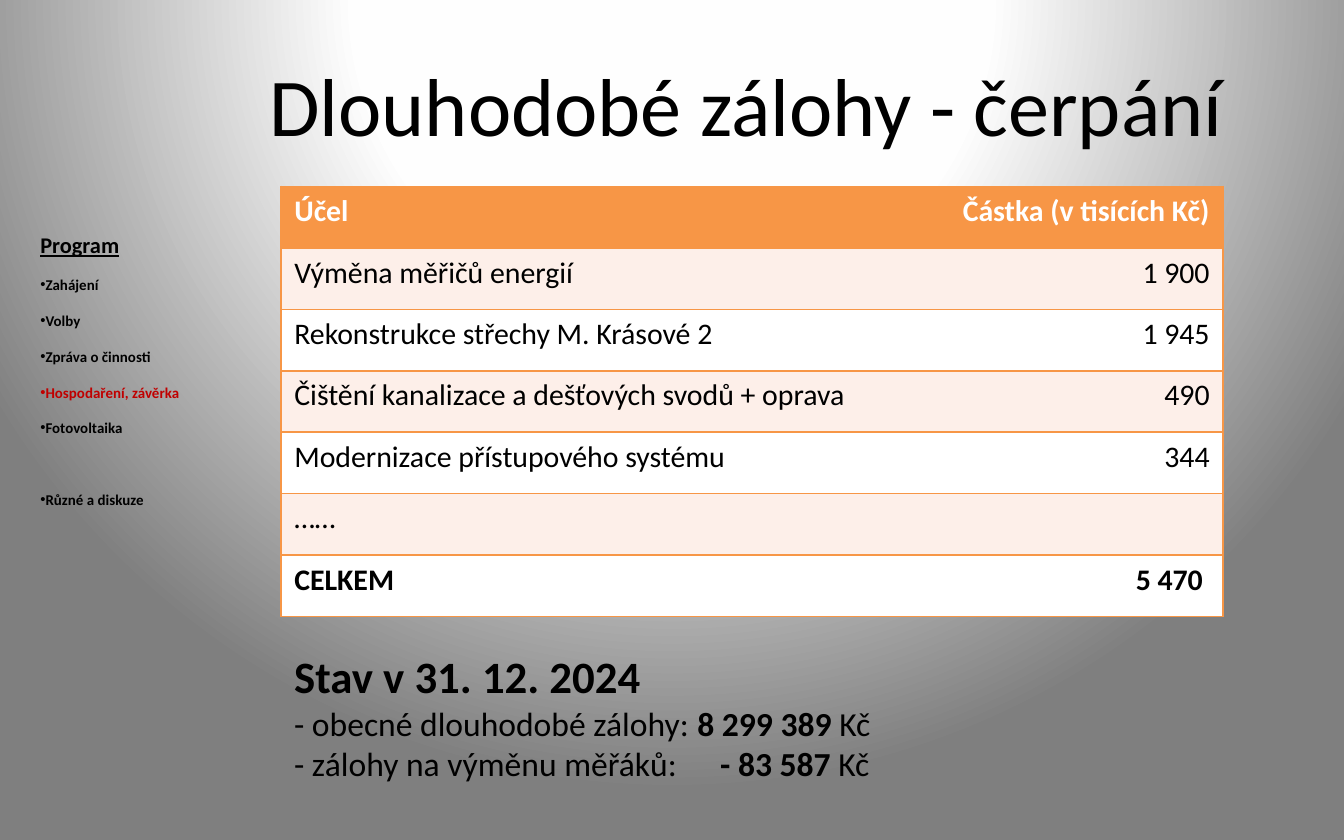
from lxml import etree
from pptx import Presentation
from pptx import util as u
from pptx.dml.color import RGBColor
from pptx.enum import text
from pptx.oxml import parse_xml
from pptx.oxml.ns import nsdecls, qn

WIDTH, HEIGHT = u.Inches(10), u.Inches(6.25)
FONT = "Calibri"
BLACK = RGBColor(0, 0, 0)
WHITE = RGBColor(0xFF, 0xFF, 0xFF)
RED = RGBColor(0xC0, 0, 0)
ORANGE = RGBColor(0xF7, 0x96, 0x46)
PEACH = RGBColor(0xFD, 0xEF, 0xE9)
BACKDROP = [(0, WHITE), (40, RGBColor(0xFE, 0xFE, 0xFE)),
            (100, RGBColor(0x7F, 0x7F, 0x7F))]

AGENDA = ["Zahájení", "Volby", "Zpráva o činnosti", "Hospodaření, závěrka",
          "Fotovoltaika", "Různé a diskuze"]
CURRENT, LAST = AGENDA[3], AGENDA[-1]
SPENDING = [
    ("Účel", "Částka (v tisících Kč)"),
    ("Výměna měřičů energií", "1 900"),
    ("Rekonstrukce střechy M. Krásové 2", "1 945"),
    ("Čištění kanalizace a dešťových svodů + oprava", "490"),
    ("Modernizace přístupového systému", "344"),
    ("……", ""),
    ("CELKEM", "5 470 "),
]
# Label, amount, and tab position of the amount in inches
BALANCES = [("- obecné dlouhodobé zálohy:", "8 299 389 ", 3),
            ("- zálohy na výměnu měřáků:", "- 83 587 ", 3.17)]


def area(left, top, width, height):
    """Turn percentages of the slide into left, top, width, height."""
    return (int(WIDTH * left / 100), int(HEIGHT * top / 100),
            int(WIDTH * width / 100), int(HEIGHT * height / 100))


def place(shape, box):
    shape.left, shape.top, shape.width, shape.height = box


def style(run, size, color=BLACK, bold=False, underline=False):
    font = run.font
    font.name, font.size, font.bold = FONT, u.Pt(size), bold
    font.underline = underline
    font.color.rgb = color


def paint_background(slide):
    stops = "".join(f'<a:gs pos="{pos * 1000}"><a:srgbClr val="{color}"/></a:gs>'
                    for pos, color in BACKDROP)
    slide.background.fill.solid()
    properties = slide._element.cSld.find(qn("p:bg")).find(qn("p:bgPr"))
    properties.replace(properties[0], parse_xml(
        f'<a:gradFill {nsdecls("a")} rotWithShape="1"><a:gsLst>{stops}</a:gsLst>'
        '<a:path path="circle"><a:fillToRect l="50000" t="-80000" r="50000" '
        'b="180000"/></a:path></a:gradFill>'))


def set_title(title):
    place(title, area(16.1, 4, 78.9, 16.6))
    title.text_frame.text = "Dlouhodobé zálohy - čerpání"
    title.text_frame.auto_size = text.MSO_AUTO_SIZE.NONE
    style(title.text_frame.paragraphs[0].runs[0], 44)


def set_bullet(paragraph, char=None):
    properties = paragraph._p.get_or_add_pPr()
    properties.set("marL", "0")
    properties.set("indent", "0")
    if char:
        etree.SubElement(properties, qn("a:buFont"), typeface="Arial")
        etree.SubElement(properties, qn("a:buChar"), char=char)
    else:
        etree.SubElement(properties, qn("a:buNone"))


def fill_agenda(body):
    place(body, area(2, 23.5, 12.6, 42))
    frame = body.text_frame
    frame.text = "\n".join(["Program"] + AGENDA)
    frame.auto_size = text.MSO_AUTO_SIZE.NONE
    heading, *items = frame.paragraphs
    for paragraph in frame.paragraphs:
        paragraph.line_spacing = 2.0
        paragraph.space_before = u.Pt(0)
    set_bullet(heading)
    style(heading.runs[0], 12, bold=True, underline=True)
    for item in items:
        set_bullet(item, "•")
        color = RED if item.text == CURRENT else BLACK
        style(item.runs[0], 8, color, bold=True)
        if item.text == LAST:
            item.space_before = u.Pt(19.3)


def set_borders(cell, visible):
    """Draw the sides named in visible (L, R, T, B) and hide the others."""
    properties = cell._tc.get_or_add_tcPr()
    for index, side in enumerate("LRTB"):
        fill = (f'<a:solidFill><a:srgbClr val="{ORANGE}"/></a:solidFill>'
                if side in visible else "<a:noFill/>")
        properties.insert(index, parse_xml(
            f'<a:ln{side} {nsdecls("a")} w="{u.Pt(1)}">{fill}</a:ln{side}>'))


def add_spending_table(slide):
    box = area(20.9, 22.2, 70.1, 51.2)
    table = slide.shapes.add_table(len(SPENDING), 2, *box).table
    table.columns[0].width = u.Inches(4.88)
    table.columns[1].width = u.Inches(2.13)
    for row, entries in enumerate(SPENDING):
        header, total = row == 0, row == len(SPENDING) - 1
        fill = ORANGE if header else (PEACH if row % 2 else WHITE)
        for column, entry in enumerate(entries):
            cell = table.cell(row, column)
            cell.text_frame.text = entry
            cell.fill.solid()
            cell.fill.fore_color.rgb = fill
            set_borders(cell, "RTB" if column else "LTB")
            paragraph = cell.text_frame.paragraphs[0]
            if column:
                paragraph.alignment = text.PP_ALIGN.RIGHT
            for run in paragraph.runs:
                style(run, 16, WHITE if header else BLACK, header or total)


def add_balance(slide):
    frame = slide.shapes.add_textbox(*area(20.9, 76.5, 70.1, 17.8)).text_frame
    frame.word_wrap = True
    frame.text = "Stav v 31. 12. 2024"
    style(frame.paragraphs[0].runs[0], 24, bold=True)
    for label, amount, position in BALANCES:
        paragraph = frame.add_paragraph()
        tabs = etree.SubElement(paragraph._p.get_or_add_pPr(), qn("a:tabLst"))
        etree.SubElement(tabs, qn("a:tab"), pos=str(u.Inches(position)), algn="l")
        for part in (label + "\t", amount, "Kč"):
            run = paragraph.add_run()
            run.text = part
            style(run, 18, bold=part == amount)


def main():
    deck = Presentation()
    deck.slide_width, deck.slide_height = WIDTH, HEIGHT
    slide = deck.slides.add_slide(deck.slide_layouts[1])
    paint_background(slide)
    set_title(slide.shapes.title)
    fill_agenda(slide.placeholders[1])
    add_spending_table(slide)
    add_balance(slide)
    deck.save("out.pptx")


if __name__ == "__main__":
    main()
